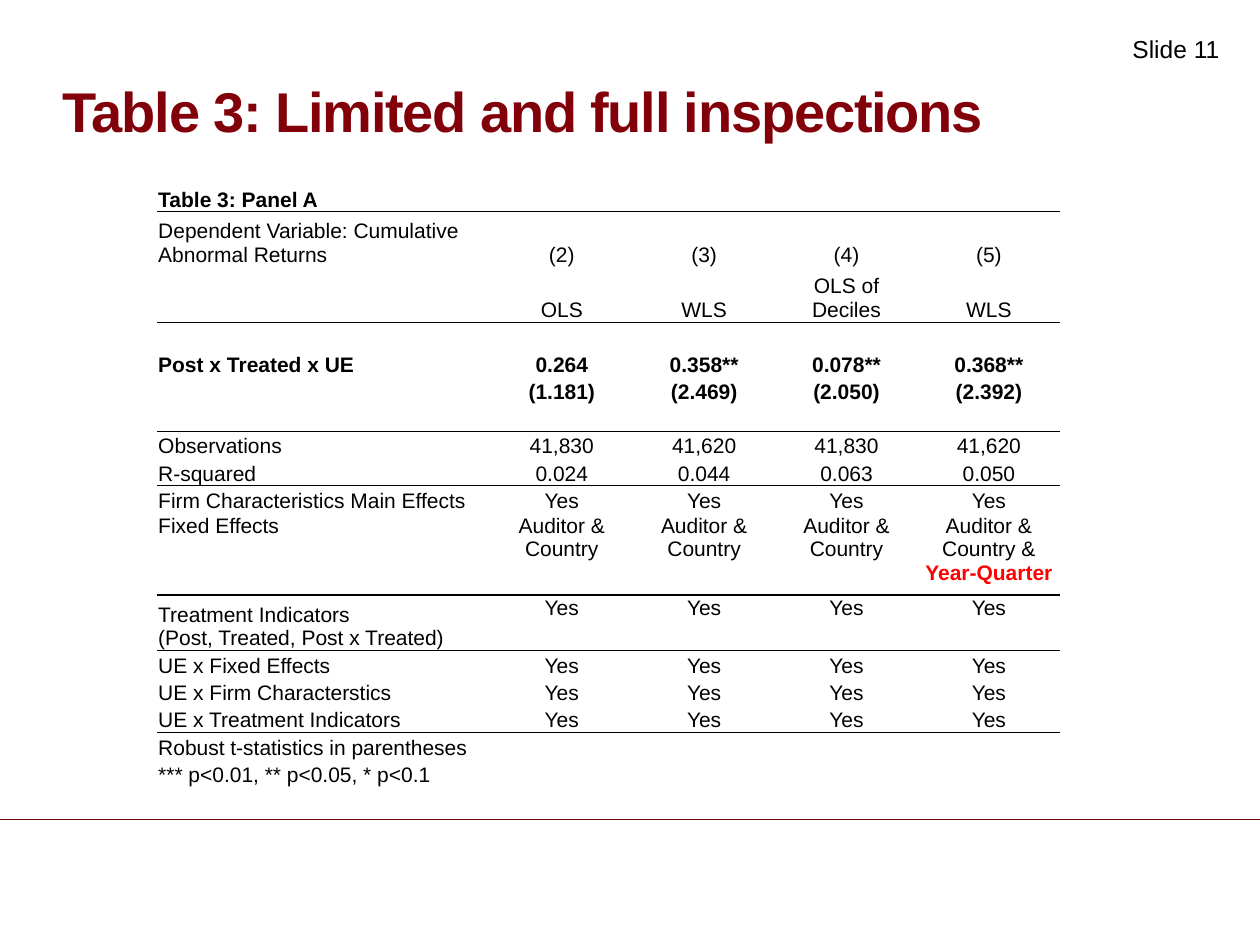
"""Build the slide with the regression table on limited and full inspections."""
import copy

import pptx
import pptx.dml.color
import pptx.enum.shapes
import pptx.enum.text
import pptx.oxml
import pptx.oxml.ns
import pptx.util

Cm = pptx.util.Cm
Pt = pptx.util.Pt
ANCHOR = pptx.enum.text.MSO_ANCHOR
ALIGN = pptx.enum.text.PP_ALIGN
NS = pptx.oxml.ns.nsdecls("a")

COLORS = {"text": "000000", "title": "820009", "accent": "FF0000", "footer": "6E0000"}
FONT = "Arial"
BODY_SIZE = 12
INSET = Cm(0.03)

YES = ["Yes"] * 4
BLANK = [""] * 4
AUDITOR = "Auditor & Country"
ROWS = [
    ["Table 3: Panel A", *BLANK],
    ["Dependent Variable: Cumulative Abnormal Returns", "(2)", "(3)", "(4)", "(5)"],
    ["", "OLS", "WLS", "OLS of Deciles", "WLS"],
    ["", *BLANK],
    ["Post x Treated x UE", "0.264", "0.358**", "0.078**", "0.368**"],
    ["", "(1.181)", "(2.469)", "(2.050)", "(2.392)"],
    ["", *BLANK],
    ["Observations", "41,830", "41,620", "41,830", "41,620"],
    ["R-squared", "0.024", "0.044", "0.063", "0.050"],
    ["Firm Characteristics Main Effects", *YES],
    ["Fixed Effects", AUDITOR, AUDITOR, AUDITOR, AUDITOR + " & "],
    ["Treatment Indicators\n(Post, Treated, Post x Treated)", *YES],
    ["UE x Fixed Effects", *YES],
    ["UE x Firm Characterstics", *YES],
    ["UE x Treatment Indicators", *YES],
    ["Robust t-statistics in parentheses", *BLANK],
    ["*** p<0.01, ** p<0.05, * p<0.1", *BLANK],
]
FIXED_EFFECTS, TREATMENT = 10, 11
BOLD_ROWS = {0, 4, 5}
RULES_BELOW = {0: 0.5, 2: 0.5, 6: 0.5, 8: 0.5, FIXED_EFFECTS: 1, TREATMENT: 1, 14: 0.5}
ROW_HEIGHT = 0.55
TALL_ROWS = {0: 0.69, 1: 1.11, 2: 1.11, FIXED_EFFECTS: 1.66, TREATMENT: 1.11}
COLUMN_WIDTHS = [6.73] + [2.87] * 4


def write(paragraph, text, size=BODY_SIZE, color="text", bold=False, tracking=None):
    """Append formatted text to a paragraph, breaking lines at newlines."""
    for number, line in enumerate(text.split("\n")):
        if number:
            paragraph.add_line_break()
        run = paragraph.add_run()
        run.text = line
        run.font.name = FONT
        run.font.size = Pt(size)
        run.font.bold = bold
        run.font.color.rgb = pptx.dml.color.RGBColor.from_string(COLORS[color])
        properties = run.font._element
        if tracking is not None:
            properties.set("spc", str(round(tracking * 100)))
        if number:
            run._r.getprevious().append(copy.deepcopy(properties))


def add_label(slide, text, left, top, width, height, insets, anchor, line_spacing=1.0, **style):
    """Add a wrapped text box holding one paragraph."""
    frame = slide.shapes.add_textbox(Cm(left), Cm(top), Cm(width), Cm(height)).text_frame
    frame.word_wrap = True
    frame.vertical_anchor = anchor
    frame.margin_left = frame.margin_right = Cm(insets[0])
    frame.margin_top = frame.margin_bottom = Cm(insets[1])
    frame.paragraphs[0].line_spacing = line_spacing
    write(frame.paragraphs[0], text, **style)


def add_footer_rule(slide, width, top):
    """Draw the thin line across the foot of the slide."""
    rule = slide.shapes.add_connector(
        pptx.enum.shapes.MSO_CONNECTOR.STRAIGHT, 0, Cm(top), width, Cm(top))
    rule.line.width = Pt(0.25)
    rule.line.color.rgb = pptx.dml.color.RGBColor.from_string(COLORS["footer"])
    rule._element.spPr.append(pptx.oxml.parse_xml(f"<a:effectLst {NS}/>"))


def set_borders(cell, above, below):
    """Give a cell its horizontal rules, in points, and hide its other borders."""
    for side, points in zip("LRTB", (0, 0, above, below)):
        fill = (f'<a:solidFill><a:srgbClr val="{COLORS["text"]}"/></a:solidFill>'
                if points else "<a:noFill/>")
        border = f'<a:ln{side} {NS} w="{Pt(points)}">{fill}</a:ln{side}>'
        cell._tc.get_or_add_tcPr().append(pptx.oxml.parse_xml(border))


def fill_cell(cell, text, row, column):
    """Write and format one table cell."""
    cell.margin_left = cell.margin_right = cell.margin_top = INSET
    cell.margin_bottom = 0
    top_aligned = row == FIXED_EFFECTS or (row == TREATMENT and column)
    cell.vertical_anchor = ANCHOR.TOP if top_aligned else ANCHOR.BOTTOM
    set_borders(cell, RULES_BELOW.get(row - 1, 0), RULES_BELOW.get(row, 0))
    cell.fill.background()
    paragraph = cell.text_frame.paragraphs[0]
    paragraph.alignment = ALIGN.CENTER if column else ALIGN.LEFT
    if text:
        write(paragraph, text, bold=row in BOLD_ROWS)
    else:
        paragraph._p.append(pptx.oxml.parse_xml(f'<a:endParaRPr {NS} sz="{BODY_SIZE * 100}"/>'))


def add_results(slide, left, top):
    """Add the table of regression results."""
    heights = [TALL_ROWS.get(row, ROW_HEIGHT) for row in range(len(ROWS))]
    results = slide.shapes.add_table(
        len(ROWS), len(COLUMN_WIDTHS), Cm(left), Cm(top),
        Cm(sum(COLUMN_WIDTHS)), Cm(sum(heights))).table
    results.first_row = results.horz_banding = False
    for column, width in enumerate(COLUMN_WIDTHS):
        results.columns[column].width = Cm(width)
    for row, texts in enumerate(ROWS):
        results.rows[row].height = Cm(heights[row])
        for column, text in enumerate(texts):
            fill_cell(results.cell(row, column), text, row, column)
    last_effects = results.cell(FIXED_EFFECTS, len(COLUMN_WIDTHS) - 1)
    write(last_effects.text_frame.paragraphs[0], "Year-Quarter", color="accent", bold=True)


def main():
    """Build and save the presentation."""
    deck = pptx.Presentation()
    deck.slide_width, deck.slide_height = Cm(25.4), Cm(19.05)
    slide = deck.slides.add_slide(deck.slide_layouts[6])
    add_footer_rule(slide, deck.slide_width, 16.51)
    add_label(slide, "Slide 11", 22.58, 0.48, 2.82, 1.32, (0.25, 0.2), ANCHOR.TOP, size=14)
    add_label(slide, "Table 3: Limited and full inspections", 1.27, 0.74, 22.86, 2.18, (0, 0),
              ANCHOR.BOTTOM, line_spacing=0.9, size=32, color="title", bold=True, tracking=-0.7)
    add_results(slide, 3.16, 3.58)
    deck.save("out.pptx")


if __name__ == "__main__":
    main()
